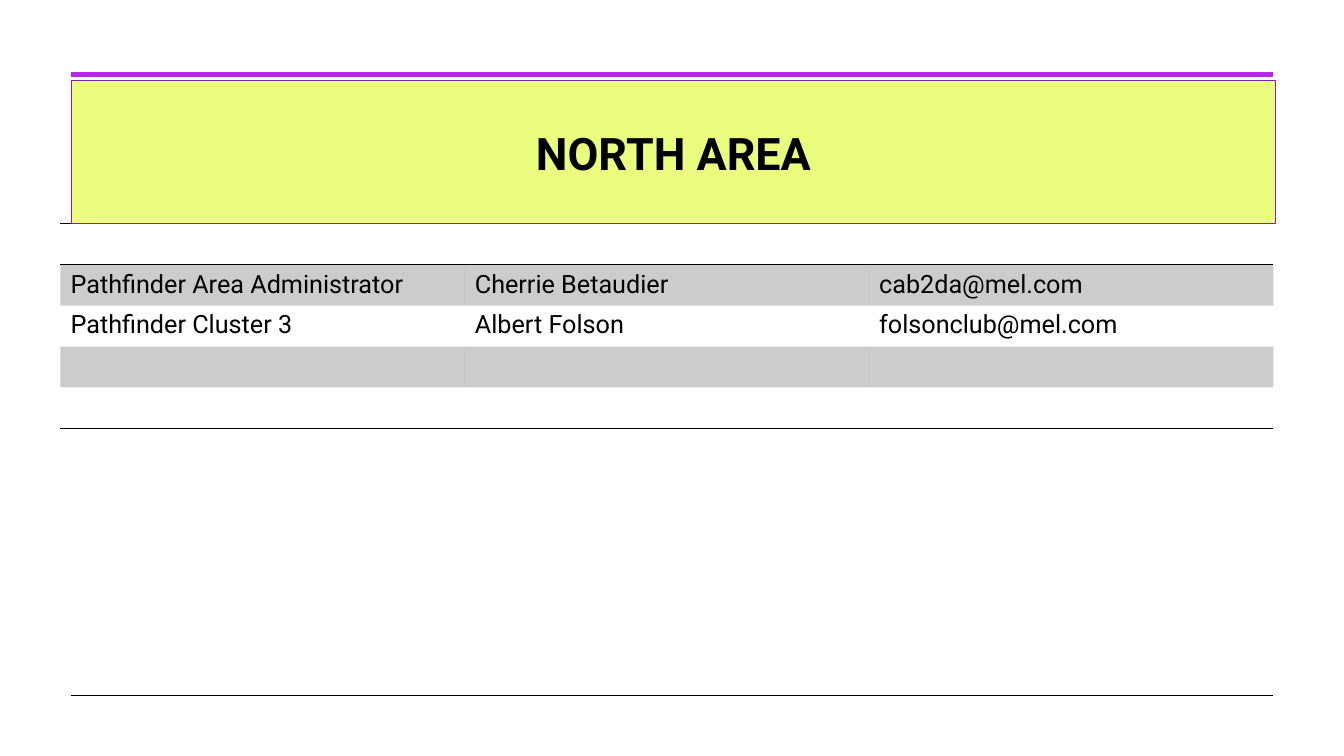
from dataclasses import dataclass

from lxml.etree import SubElement
from pptx import Presentation
from pptx.dml.color import RGBColor
from pptx.enum.shapes import MSO_CONNECTOR as Connector, MSO_SHAPE as Shape
from pptx.enum.text import MSO_ANCHOR as Anchor, PP_ALIGN as Align
from pptx.oxml.ns import qn
from pptx.util import Inches, Pt


@dataclass(frozen=True)
class Theme:
    font: str = "Roboto"
    ink: str = "000000"
    accent: str = "B829E7"
    banner_fill: str = "EBFD7F"
    banner_line: str = "881EAB"
    band_opacity: int = 20  # percent
    title_size: int = 32
    body_size: int = 18
    border_width: int = 1


@dataclass(frozen=True)
class Rule:
    y: float
    color: str
    width: float


@dataclass(frozen=True)
class Row:
    cells: tuple[str, str, str] = ("", "", "")
    banded: bool = False
    borders: tuple[str, ...] = ()


THEME = Theme()
WIDTH, HEIGHT = 13.33, 7.5
RULE_LEFT, RULE_RIGHT = 0.7, 12.63
BANNER = (0.71, 0.8, 11.94, 1.42)
ROSTER_LEFT, ROSTER_TOP = 0.6, 2.22
COLUMN, ROW = 4.01, 0.406
NO_STYLE = "{2D5ABB26-0587-4C30-8999-92F81FD0307C}"

RULES = (Rule(0.74, THEME.accent, 3), Rule(6.9, THEME.ink, 0.5))
ROSTER = (
    Row(borders=("a:lnT", "a:lnB")),
    Row(("Pathfinder Area Administrator", "Cherrie Betaudier", "cab2da@mel.com"), banded=True),
    Row(("Pathfinder Cluster 3", "Albert Folson", "folsonclub@mel.com")),
    Row(banded=True),
    Row(borders=("a:lnB",)),
)


def rgb(color: str) -> RGBColor:
    return RGBColor.from_string(color)


def add_text(paragraph, text: str, size: int, bold: bool = False) -> None:
    run = paragraph.add_run()
    run.text = text
    run.font.name = THEME.font
    run.font.size = Pt(size)
    run.font.bold = bold
    run.font.color.rgb = rgb(THEME.ink)


def add_rule(slide, rule: Rule) -> None:
    y = Inches(rule.y)
    line = slide.shapes.add_connector(
        Connector.STRAIGHT, Inches(RULE_LEFT), y, Inches(RULE_RIGHT), y)
    line.line.color.rgb = rgb(rule.color)
    line.line.width = Pt(rule.width)
    SubElement(line._element.spPr, qn("a:effectLst"))


def add_border(cell, edge: str) -> None:
    properties = cell._tc.get_or_add_tcPr()
    border = SubElement(properties, qn(edge), w=str(Pt(THEME.border_width)))
    fill = SubElement(border, qn("a:solidFill"))
    SubElement(fill, qn("a:srgbClr"), val=THEME.ink)


def fill_cell(cell, banded: bool) -> None:
    if not banded:
        cell.fill.background()
        return
    cell.fill.solid()
    cell.fill.fore_color.rgb = rgb(THEME.ink)
    color = cell._tc.tcPr.find(qn("a:solidFill")).find(qn("a:srgbClr"))
    SubElement(color, qn("a:alpha"), val=str(THEME.band_opacity * 1000))


def add_roster(slide, rows: tuple[Row, ...]) -> None:
    columns = len(rows[0].cells)
    table = slide.shapes.add_table(
        len(rows), columns, Inches(ROSTER_LEFT), Inches(ROSTER_TOP),
        Inches(COLUMN * columns), Inches(ROW * len(rows))).table
    table._tbl.tblPr.find(qn("a:tableStyleId")).text = NO_STYLE
    table.first_row = table.horz_banding = False
    for column in table.columns:
        column.width = Inches(COLUMN)
    for r, row in enumerate(rows):
        table.rows[r].height = Inches(ROW)
        for c, entry in enumerate(row.cells):
            cell = table.cell(r, c)
            for edge in row.borders:
                add_border(cell, edge)
            fill_cell(cell, row.banded)
            paragraph = cell.text_frame.paragraphs[0]
            if entry:
                add_text(paragraph, entry, THEME.body_size)
            else:
                paragraph.font.size = Pt(THEME.body_size)


def add_banner(slide, title: str) -> None:
    banner = slide.shapes.add_shape(Shape.RECTANGLE, *map(Inches, BANNER))
    banner.shadow.inherit = False
    banner.fill.solid()
    banner.fill.fore_color.rgb = rgb(THEME.banner_fill)
    banner.line.color.rgb = rgb(THEME.banner_line)
    banner.line.width = Pt(THEME.border_width)
    banner.text_frame.vertical_anchor = Anchor.MIDDLE
    heading = banner.text_frame.paragraphs[0]
    heading.alignment = Align.CENTER
    add_text(heading, title, THEME.title_size, bold=True)


def main() -> None:
    deck = Presentation()
    deck.slide_width, deck.slide_height = Inches(WIDTH), Inches(HEIGHT)
    slide = deck.slides.add_slide(deck.slide_layouts[6])

    # Rules at the head and foot
    for rule in RULES:
        add_rule(slide, rule)

    # Contacts, then the area banner above them
    add_roster(slide, ROSTER)
    add_banner(slide, "NORTH AREA")

    deck.save("out.pptx")


if __name__ == "__main__":
    main()
